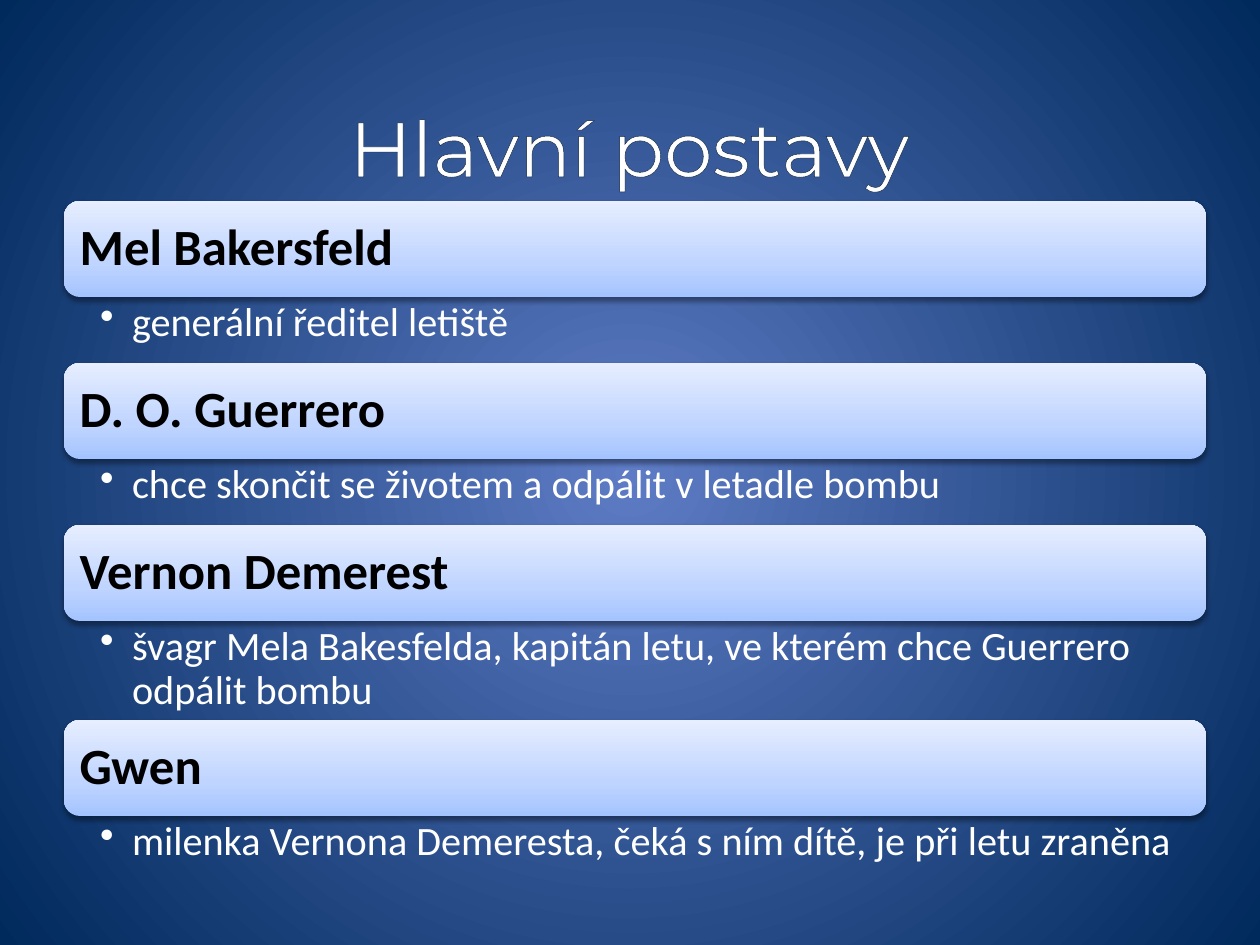
from lxml.etree import SubElement
from pptx import Presentation
from pptx.dml.color import RGBColor
from pptx.enum.shapes import MSO_SHAPE
from pptx.enum.text import MSO_ANCHOR, PP_ALIGN
from pptx.oxml import parse_xml
from pptx.oxml.ns import nsdecls, qn
from pptx.util import Emu, Pt

PX_PER_INCH = 126
LEFT, TOP, WIDTH = 64, 201, 1142
BAR_HEIGHT = 96
BACKGROUND = [(0, "5E7CC5"), (100, "00295C")]
BAR_FILL = [(0, "A4C4FF"), (35, "BFD4FF"), (100, "E6EEFF")]
FROM_CENTRE = ('<a:path path="circle"><a:fillToRect l="50000" t="50000" '
               'r="50000" b="50000"/></a:path>')
UPWARDS = '<a:lin ang="16200000" scaled="0"/>'

# name, description, height of the description
CHARACTERS = [
    ("Mel Bakersfeld", "generální ředitel letiště", 66),
    ("D. O. Guerrero", "chce skončit se životem a odpálit v letadle bombu", 66),
    ("Vernon Demerest",
     "švagr Mela Bakesfelda, kapitán letu, ve kterém chce Guerrero odpálit bombu", 99),
    ("Gwen", "milenka Vernona Demeresta, čeká s ním dítě, je při letu zraněna", 66),
]


def px(n):
    return Emu(round(n * 914400 / PX_PER_INCH))


def rgb(color):
    return RGBColor.from_string(color)


def gradient(stops, direction):
    gs = "".join(f'<a:gs pos="{pos * 1000}"><a:srgbClr val="{color}"/></a:gs>'
                 for pos, color in stops)
    return (f'<a:gradFill {nsdecls("a")} rotWithShape="1">'
            f'<a:gsLst>{gs}</a:gsLst>{direction}</a:gradFill>')


def set_background(s):
    bg = parse_xml(f'<p:bg {nsdecls("p", "a")}><p:bgPr>'
                   f'{gradient(BACKGROUND, FROM_CENTRE)}<a:effectLst/></p:bgPr></p:bg>')
    s.element.cSld.insert(0, bg)


def set_text(sp, text, *, size, color="FFFFFF", font="Calibri", bold=False,
             align=PP_ALIGN.LEFT, anchor=MSO_ANCHOR.MIDDLE, spacing=0.9,
             insets=(13, 6, 13, 6)):
    """Write one paragraph; insets are left, top, right, bottom."""
    tf = sp.text_frame
    tf.word_wrap = True
    tf.vertical_anchor = anchor
    tf.margin_left, tf.margin_top, tf.margin_right, tf.margin_bottom = map(px, insets)
    p = tf.paragraphs[0]
    p.alignment, p.line_spacing = align, spacing
    r = p.add_run()
    r.text = text
    r.font.name, r.font.size, r.font.bold = font, Pt(size), bold
    r.font.color.rgb = rgb(color)
    return p


def add_title(s, text):
    sp = s.shapes.add_textbox(px(234), px(93), px(791), px(106))
    p = set_text(sp, text, size=44, font="Montserrat", align=PP_ALIGN.CENTER, spacing=1.0)
    outline = parse_xml(f'<a:ln {nsdecls("a")} w="{Pt(1.45)}"><a:solidFill>'
                        '<a:srgbClr val="0F243E"/></a:solidFill></a:ln>')
    p.runs[0].font._element.insert(0, outline)


def add_name_bar(s, name, top):
    sp = s.shapes.add_shape(MSO_SHAPE.ROUNDED_RECTANGLE,
                            px(LEFT), px(top), px(WIDTH), px(BAR_HEIGHT))
    spPr = sp._element.spPr
    spPr.append(parse_xml(gradient(BAR_FILL, UPWARDS)))
    sp.line.fill.background()
    sp.shadow.inherit = False
    spPr.find(qn("a:effectLst")).append(parse_xml(
        f'<a:outerShdw {nsdecls("a")} blurRad="{Pt(3.1)}" dist="{Pt(1.6)}" dir="5400000" '
        'rotWithShape="0"><a:srgbClr val="000000"><a:alpha val="38000"/></a:srgbClr>'
        '</a:outerShdw>'))
    # the rounded corners already push the text in by about 5 px
    set_text(sp, name, size=29, color="000000", bold=True, insets=(11, 11, 11, 11))


def add_description(s, text, top, height):
    sp = s.shapes.add_textbox(px(LEFT), px(top), px(WIDTH), px(height))
    p = set_text(sp, text, size=23, anchor=MSO_ANCHOR.TOP, insets=(36, 5, 29, 5))
    pPr = p._p.get_or_add_pPr()
    pPr.set("marL", str(px(32)))
    pPr.set("indent", str(-px(32)))
    SubElement(pPr, qn("a:buChar")).set("char", "•")


def main():
    prs = Presentation()
    prs.slide_width, prs.slide_height = px(1260), px(945)
    s = prs.slides.add_slide(prs.slide_layouts[6])
    set_background(s)
    add_title(s, "Hlavní postavy")
    top = TOP
    for name, description, height in CHARACTERS:
        add_name_bar(s, name, top)
        add_description(s, description, top + BAR_HEIGHT, height)
        top += BAR_HEIGHT + height
    prs.save("out.pptx")


if __name__ == "__main__":
    main()
